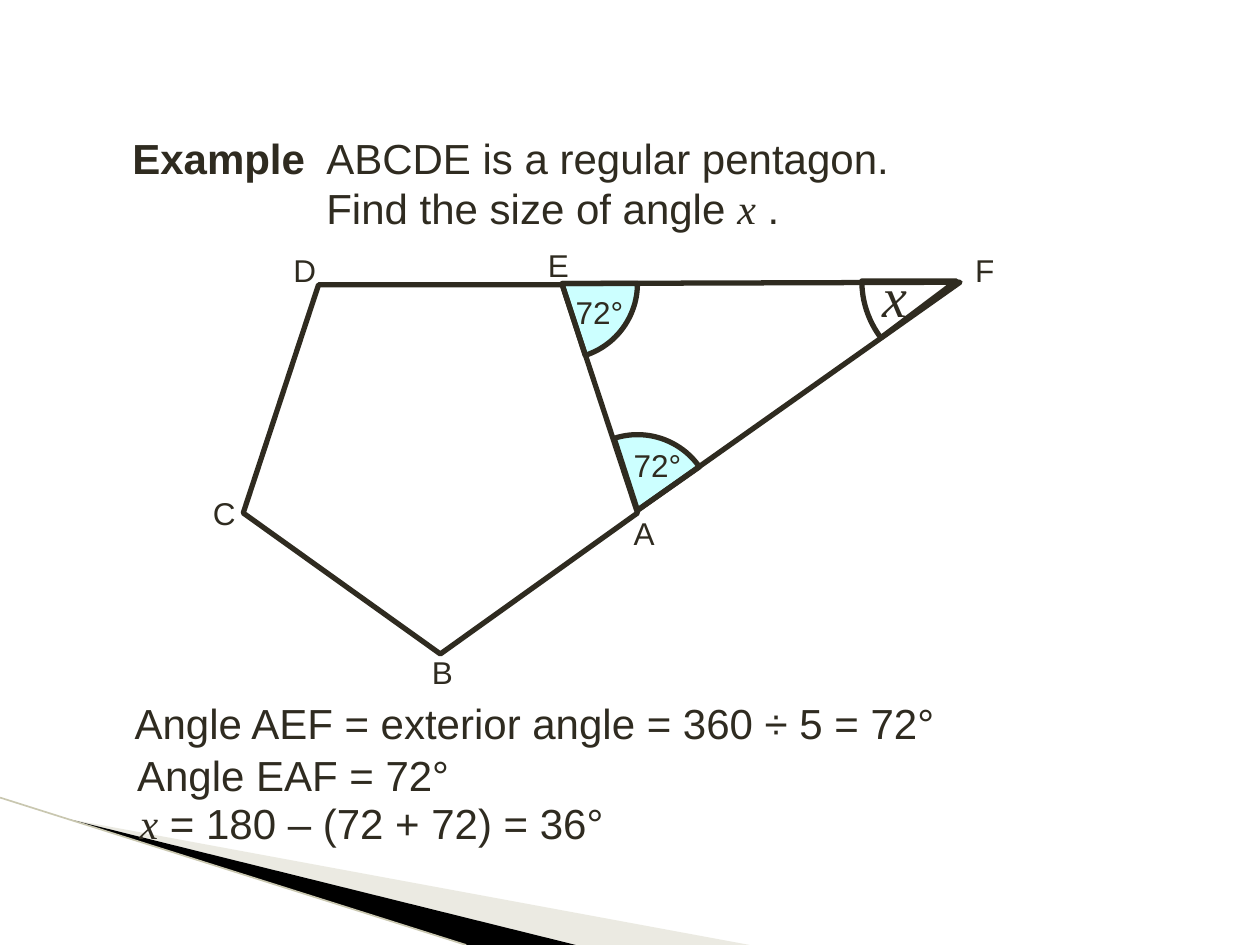
from dataclasses import dataclass
from math import cos, radians, sin

from lxml.etree import SubElement
from pptx import Presentation
from pptx.dml.color import RGBColor
from pptx.enum.shapes import MSO_CONNECTOR, MSO_SHAPE
from pptx.enum.text import MSO_ANCHOR, MSO_AUTO_SIZE, PP_ALIGN
from pptx.oxml.ns import qn
from pptx.util import Inches, Pt


@dataclass(frozen=True)
class Theme:
    """Colours, fonts, type sizes and line widths."""
    ink: str = "2F2B20"
    angle: str = "CCFFFF"
    paper: str = "FFFFFF"
    wing: str = "CECCB7"
    blade: str = "000000"
    edge: str = "C9C7B0"
    sans: str = "Arial"
    serif: str = "Times New Roman"
    body: int = 24
    label: int = 18
    unknown: int = 32
    stroke: float = 3
    hairline: float = 0.95


T = Theme()


def add_run(p, text, size=T.body, font=T.sans, bold=False, italic=False):
    """Append one formatted run to a paragraph."""
    r = p.add_run()
    r.text = text
    r.font.size, r.font.name = Pt(size), font
    r.font.bold, r.font.italic = bold, italic
    r.font.color.rgb = RGBColor.from_string(T.ink)


def add_text(s, text, x, y, w, h, **fmt):
    """Add a wrapped text box and return its paragraph."""
    tf = s.shapes.add_textbox(Inches(x), Inches(y), Inches(w), Inches(h)).text_frame
    tf.word_wrap = True
    p = tf.paragraphs[0]
    if text:
        add_run(p, text, **fmt)
    return p


def style(sp, fill=None, line=None):
    """Set a shape's fill and outline, without shadow."""
    sp.shadow.inherit = False
    if fill:
        sp.fill.solid()
        sp.fill.fore_color.rgb = RGBColor.from_string(fill)
    else:
        sp.fill.background()
    if line:
        sp.line.color.rgb = RGBColor.from_string(line)
        sp.line.width = Pt(T.stroke)
    else:
        sp.line.fill.background()


def add_path(s, points, close=True, **look):
    """Add a freeform through points given in inches."""
    pts = [(Inches(x), Inches(y)) for x, y in points]
    fb = s.shapes.build_freeform(*pts[0])
    fb.add_line_segments(pts[1:], close=close)
    sp = fb.convert_to_shape()
    style(sp, **look)
    return sp


def add_sector(s, x, y, radius, start, end, fill=None):
    """Mark the angle at a vertex, in degrees clockwise from east."""
    steps = 24
    turns = [radians(start + (end - start) * i / steps) for i in range(steps + 1)]
    arc = [(x + radius * cos(t), y + radius * sin(t)) for t in turns]
    add_path(s, [(x, y)] + arc, fill=fill, line=T.ink)


def add_wings(s, x, y, bottom):
    """Draw the corner decoration from its tip down to the slide's bottom."""
    wing = add_path(s, [(x, y), (5.95, bottom), (4.56, bottom)], fill=T.wing)
    color = wing.fill._xPr.find(qn("a:solidFill"))[0]
    SubElement(color, qn("a:alpha"), val="40000")
    add_path(s, [(x, y), (4.57, bottom), (3.7, bottom)], fill=T.blade)
    cx = s.shapes.add_connector(MSO_CONNECTOR.STRAIGHT, 0, Inches(6.33),
                                Inches(3.7), Inches(bottom))
    cx.line.color.rgb = RGBColor.from_string(T.edge)
    cx.line.width = Pt(T.hairline)
    SubElement(cx._element.spPr, qn("a:effectLst"))


def add_question(s, x, y, w, h):
    """Put the question in the title, both lines aligned on one indent."""
    sp = s.shapes.title
    sp.left, sp.top, sp.width, sp.height = map(Inches, (x, y, w, h))
    tf = sp.text_frame
    tf.word_wrap, tf.auto_size = False, MSO_AUTO_SIZE.NONE
    tf.vertical_anchor = MSO_ANCHOR.TOP
    indent = Inches(1.54)
    first, second = tf.paragraphs[0], tf.add_paragraph()
    for p, hang in ((first, -indent), (second, 0)):
        p.alignment = PP_ALIGN.LEFT
        pPr = p._p.get_or_add_pPr()
        pPr.set("marL", str(indent))
        pPr.set("indent", str(hang))
    add_run(first, "Example", bold=True)
    add_run(first, "\tABCDE is a regular pentagon.")
    add_run(second, "Find the size of angle ")
    add_run(second, "x", font=T.serif, italic=True)
    add_run(second, " .")


def add_figure(s, x, y, w, h):
    """Draw the pentagon in its box, the outer triangle and all labels."""
    e, a, f = (4.46, 2.25), (x + w, 4.05), (7.62, 2.24)
    add_sector(s, *e, 0.6, 0, 72, fill=T.angle)
    add_sector(s, *a, 0.6, 252, 325, fill=T.angle)
    for left, top in ((4.47, 2.28), (4.93, 3.49)):
        add_text(s, "72°", left, top, 0.92, 0.4, size=T.label)

    sp = s.shapes.add_shape(MSO_SHAPE.RECTANGLE, Inches(6.76), Inches(1.97),
                            Inches(0.68), Inches(0.74))
    style(sp, fill=T.paper)
    sp.text_frame.word_wrap = False
    sp.text_frame.vertical_anchor = MSO_ANCHOR.MIDDLE
    p = sp.text_frame.paragraphs[0]
    p.alignment = PP_ALIGN.CENTER
    add_run(p, "x", size=T.unknown, font=T.serif, italic=True)

    sp = s.shapes.add_shape(MSO_SHAPE.REGULAR_PENTAGON, Inches(x), Inches(y),
                            Inches(w), Inches(h))
    sp.rotation = 180
    style(sp, line=T.ink)
    add_path(s, [e, f, a], close=False, line=T.ink)
    add_sector(s, 7.59, 2.23, 0.75, 143, 180)

    labels = {"A": (4.93, 4.03, 0.7), "B": (3.33, 5.13, 0.48), "C": (1.59, 3.87, 0.95),
              "D": (2.23, 1.94, 0.51), "E": (4.25, 1.9, 0.67), "F": (7.64, 1.94, 0.54)}
    for name, (left, top, width) in labels.items():
        add_text(s, name, left, top, width, 0.4, size=T.label)


def add_working(s, x, y, w, h):
    """Write the three steps of the solution."""
    add_text(s, "Angle AEF = exterior angle = 360 ÷ 5 = 72°", x, y, w, h)
    add_text(s, "Angle EAF = 72°", x + 0.02, y + 0.41, w, h)
    p = add_text(s, "", x + 0.04, y + 0.79, 4.81, h)
    add_run(p, "x", font=T.serif, italic=True)
    add_run(p, " = 180 – (72 + 72) = 36°")


def main():
    """Build the slide and save it."""
    prs = Presentation()
    prs.slide_width, prs.slide_height = Inches(10), Inches(7.5)
    s = prs.slides.add_slide(prs.slide_layouts[5])
    add_wings(s, 0.54, 6.5, 7.5)
    add_question(s, 0.95, 1, 6.23, 0.9)
    add_figure(s, 1.93, 2.26, 3.13, 2.93)
    add_working(s, 0.97, 5.49, 6.96, 0.5)
    prs.save("out.pptx")


if __name__ == "__main__":
    main()
